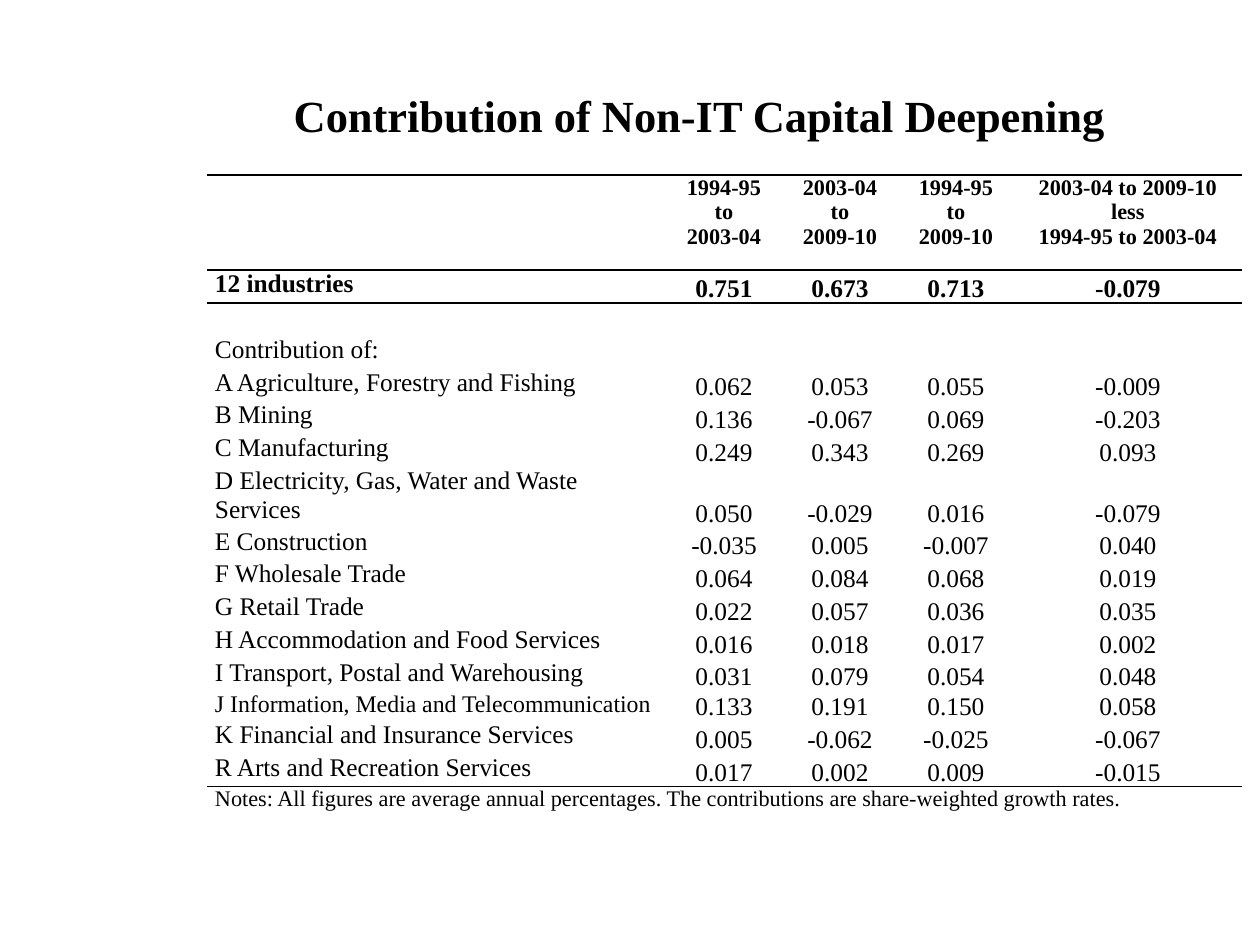
from lxml import etree
from pptx import Presentation
from pptx.dml.color import RGBColor
from pptx.enum.text import MSO_ANCHOR, MSO_AUTO_SIZE, PP_ALIGN
from pptx.oxml.ns import qn
from pptx.util import Pt

PX = 8000
TOP, MIDDLE, BOTTOM = MSO_ANCHOR.TOP, MSO_ANCHOR.MIDDLE, MSO_ANCHOR.BOTTOM
LEFT, CENTER = PP_ALIGN.LEFT, PP_ALIGN.CENTER
NO_GRID_STYLE = "{2D5ABB26-0587-4C30-8999-92F81FD0307C}"

THEME = {
    "font": "Times New Roman",
    "ink": "000000",
    "title": 28,
    "header": 14,
    "body": 16,
    "tight": 15,
    "notes": 14,
    "rule": 1,
}

contributions = [
    ("", "1994-95\nto\n2003-04", "2003-04\nto\n2009-10", "1994-95\nto\n2009-10",
     "2003-04 to 2009-10\nless\n1994-95 to 2003-04"),
    ("12 industries", "0.751", "0.673", "0.713", "-0.079"),
    ("", "", "", "", ""),
    ("Contribution of:", "", "", "", ""),
    ("A Agriculture, Forestry and Fishing", "0.062", "0.053", "0.055", "-0.009"),
    ("B Mining", "0.136", "-0.067", "0.069", "-0.203"),
    ("C Manufacturing", "0.249", "0.343", "0.269", "0.093"),
    ("D Electricity, Gas, Water and Waste Services", "0.050", "-0.029", "0.016", "-0.079"),
    ("E Construction", "-0.035", "0.005", "-0.007", "0.040"),
    ("F Wholesale Trade", "0.064", "0.084", "0.068", "0.019"),
    ("G Retail Trade", "0.022", "0.057", "0.036", "0.035"),
    ("H Accommodation and Food Services", "0.016", "0.018", "0.017", "0.002"),
    ("I Transport, Postal and Warehousing", "0.031", "0.079", "0.054", "0.048"),
    ("J Information, Media and Telecommunication", "0.133", "0.191", "0.150", "0.058"),
    ("K Financial and Insurance Services", "0.005", "-0.062", "-0.025", "-0.067"),
    ("R Arts and Recreation Services", "0.017", "0.002", "0.009", "-0.015"),
    ("Notes: All figures are average annual percentages. "
     "The contributions are share-weighted growth rates.", "", "", "", ""),
]
HEADER, TOTAL, TWO_LINE, TIGHT, LAST, NOTES = 0, 1, 7, 13, 15, 16
special_heights = {HEADER: 95, TWO_LINE: 61, TIGHT: 30}
column_widths = [459, 116, 116, 116, 228]
row_rules = {HEADER: ("lnT", "lnB"), TOTAL: ("lnT",), LAST: ("lnB",), NOTES: ("lnT",)}


def format_text(frame, size, bold, align, spacing):
    for paragraph in frame.paragraphs:
        paragraph.alignment = align
        paragraph.line_spacing = spacing
        for run in paragraph.runs:
            run.font.name = THEME["font"]
            run.font.size = Pt(size)
            run.font.bold = bold
            run.font.color.rgb = RGBColor.from_string(THEME["ink"])
        if not paragraph.runs:
            etree.SubElement(paragraph._p, qn("a:endParaRPr"), sz=str(size * 100))


def add_rule(cell, side):
    line = etree.SubElement(cell._tc.get_or_add_tcPr(), qn(f"a:{side}"),
                            w=str(Pt(THEME["rule"])))
    fill = etree.SubElement(line, qn("a:solidFill"))
    etree.SubElement(fill, qn("a:srgbClr"), val=THEME["ink"])


deck = Presentation()
deck.slide_width, deck.slide_height = 1260 * PX, 945 * PX
slide = deck.slides.add_slide(deck.slide_layouts[5])

title = slide.shapes.title
title.left, title.top, title.width, title.height = 202 * PX, 38 * PX, 994 * PX, 158 * PX
heading = title.text_frame
heading.text = "Contribution of Non-IT Capital Deepening"
heading.word_wrap = True
heading.auto_size = MSO_AUTO_SIZE.NONE
heading.vertical_anchor = MIDDLE
heading.margin_left = heading.margin_right = heading.margin_top = heading.margin_bottom = 0
format_text(heading, THEME["title"], True, CENTER, 0.99)

row_heights = [special_heights.get(row, 32 if row % 4 == 0 else 33)
               for row in range(len(contributions))]
table = slide.shapes.add_table(
    len(contributions), len(column_widths), 207 * PX, 175 * PX,
    sum(column_widths) * PX, sum(row_heights) * PX).table
table.first_row = table.horz_banding = False
table._tbl.tblPr.find(qn("a:tableStyleId")).text = NO_GRID_STYLE
for column, width in zip(table.columns, column_widths):
    column.width = width * PX

for row, entries in enumerate(contributions):
    table.rows[row].height = row_heights[row] * PX
    for col, entry in enumerate(entries):
        cell = table.cell(row, col)
        cell.text = entry
        cell.margin_left = cell.margin_right = 8 * PX
        cell.margin_top = cell.margin_bottom = 0
        cell.vertical_anchor = BOTTOM if col and row != HEADER else TOP
        for side in row_rules.get(row, ()):
            add_rule(cell, side)
        cell.fill.background()
        size = THEME["body"]
        if row == HEADER:
            size = THEME["header"]
        elif row == NOTES:
            size = THEME["notes"]
        elif (row, col) == (TIGHT, 0):
            size = THEME["tight"]
        format_text(cell.text_frame, size, row in (HEADER, TOTAL),
                    CENTER if col else LEFT, 1.01)

table.cell(NOTES, 0).merge(table.cell(NOTES, len(column_widths) - 1))

deck.save("out.pptx")
